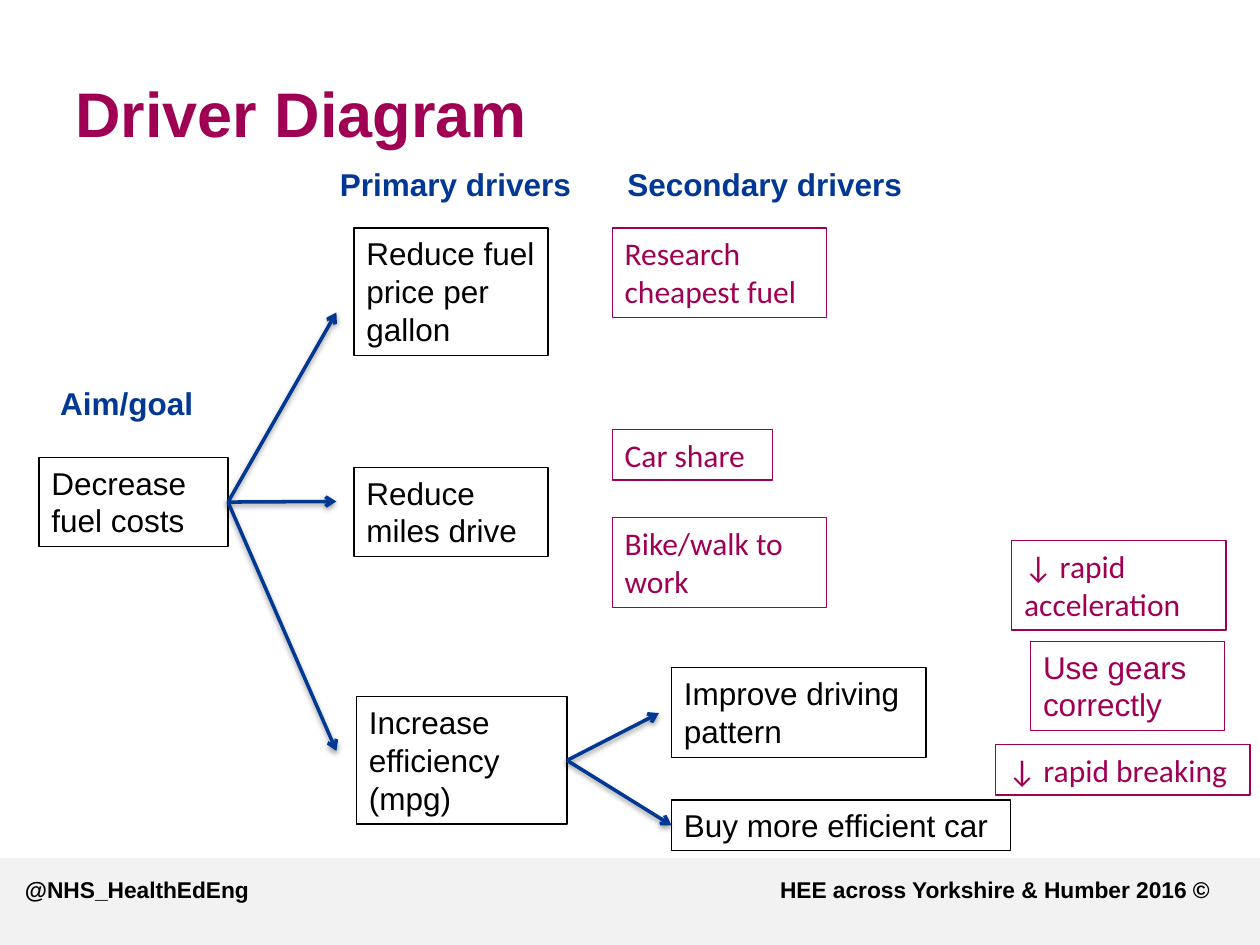
from dataclasses import dataclass
from typing import Optional

from lxml import etree
from pptx import Presentation
from pptx.dml.color import RGBColor
from pptx.enum import shapes, text
from pptx.oxml import parse_xml
from pptx.oxml.ns import nsdecls, qn
from pptx.util import Inches, Pt


@dataclass(frozen=True)
class Theme:
    black: RGBColor = RGBColor(0x00, 0x00, 0x00)
    plum: RGBColor = RGBColor(0xA0, 0x00, 0x54)
    blue: RGBColor = RGBColor(0x00, 0x38, 0x93)
    band: RGBColor = RGBColor(0xF2, 0xF2, 0xF2)
    heading_font: str = "Arial"
    idea_font: str = "Calibri"
    title_size: float = 36
    body_size: float = 18
    footer_size: float = 13


THEME = Theme()
LEFT, RIGHT = 1, 3  # connection sites of a rectangle
ONE_LINE, TWO_LINES, THREE_LINES = 0.4, 0.71, 1.01  # box heights


@dataclass(frozen=True)
class Label:
    words: str
    left: float
    top: float
    width: float
    height: float = ONE_LINE
    size: float = THEME.body_size
    color: RGBColor = THEME.blue


@dataclass(frozen=True)
class Box:
    lines: tuple[str, ...]
    left: float
    top: float
    width: float
    height: float
    color: RGBColor = THEME.black
    font: str = THEME.heading_font


@dataclass(frozen=True)
class Arrow:
    source: str
    end: tuple[float, float]
    target: Optional[str] = None


def idea(*lines: str, left: float, top: float, width: float,
         height: float = TWO_LINES, font: str = THEME.idea_font) -> Box:
    """A plum box for a concrete change."""
    return Box(lines, left, top, width, height, THEME.plum, font)


def add_run(paragraph, words: str, size: float, color: RGBColor,
            font: str = THEME.heading_font, bold: bool = False) -> None:
    run = paragraph.add_run()
    run.text = words
    run.font.name = font
    run.font.size = Pt(size)
    run.font.bold = bold
    run.font.color.rgb = color


def draw_label(slide, label: Label):
    holder = slide.shapes.add_textbox(Inches(label.left), Inches(label.top),
                                      Inches(label.width), Inches(label.height))
    frame = holder.text_frame
    frame.word_wrap = True
    frame.vertical_anchor = text.MSO_ANCHOR.MIDDLE
    add_run(frame.paragraphs[0], label.words, label.size, label.color, bold=True)
    return holder


def draw_box(slide, box: Box):
    shape = slide.shapes.add_shape(shapes.MSO_SHAPE.RECTANGLE, Inches(box.left), Inches(box.top),
                                   Inches(box.width), Inches(box.height))
    shape.shadow.inherit = False
    shape.fill.background()
    shape.line.color.rgb = box.color
    shape.line.width = Pt(0.75)
    frame = shape.text_frame
    frame.word_wrap = True
    frame.auto_size = text.MSO_AUTO_SIZE.SHAPE_TO_FIT_TEXT
    frame.vertical_anchor = text.MSO_ANCHOR.TOP
    for index, line in enumerate(box.lines):
        paragraph = frame.add_paragraph() if index else frame.paragraphs[0]
        paragraph.alignment = text.PP_ALIGN.LEFT
        add_run(paragraph, line, THEME.body_size, box.color, box.font)
    return shape


def draw_arrow(slide, arrow: Arrow, drawn: dict) -> None:
    end_x, end_y = map(Inches, arrow.end)
    source = drawn[arrow.source]
    connector = slide.shapes.add_connector(
        shapes.MSO_CONNECTOR.STRAIGHT, source.left + source.width,
        source.top + source.height // 2, end_x, end_y)
    connector.begin_connect(source, RIGHT)
    if arrow.target:
        connector.end_connect(drawn[arrow.target], LEFT)
    connector.line.color.rgb = THEME.blue
    connector.line.width = Pt(2)
    etree.SubElement(connector.line._get_or_add_ln(), qn("a:tailEnd"), type="arrow")
    connector._element.spPr.append(parse_xml(
        f'<a:effectLst {nsdecls("a")}>'
        f'<a:outerShdw blurRad="{Pt(3.1)}" dist="{Pt(1.6)}" dir="5400000" rotWithShape="0">'
        '<a:srgbClr val="000000"><a:alpha val="38000"/></a:srgbClr>'
        '</a:outerShdw></a:effectLst>'))


def draw_footer(slide) -> None:
    band = slide.shapes.add_shape(shapes.MSO_SHAPE.RECTANGLE, 0, Inches(6.81),
                                  Inches(10), Inches(0.69))
    band.shadow.inherit = False
    band.fill.solid()
    band.fill.fore_color.rgb = THEME.band
    band.line.fill.background()

    credit = slide.shapes.add_textbox(Inches(0.1), Inches(6.9), Inches(9.63), Inches(0.4))
    credit.text_frame.word_wrap = True
    paragraph = credit.text_frame.paragraphs[0]
    stops = etree.SubElement(paragraph._p.get_or_add_pPr(), qn("a:tabLst"))
    etree.SubElement(stops, qn("a:tab"), pos=str(Inches(9.4)), algn="r")
    add_run(paragraph, "@NHS_HealthEdEng\tHEE across Yorkshire & Humber 2016 ©",
            THEME.footer_size, THEME.black)
    paragraph.runs[0].font.bold = True


PRIMARY_X, IDEA_X, PATTERN_X = 2.81, 4.86, 5.33
PRIMARY_W, IDEA_W = 1.54, 1.7
ARROW_X = 2.67

LABELS = (
    Label("Driver Diagram", 0.5, 0.52, 8.5, 0.74, THEME.title_size, THEME.plum),
    Label("Aim/goal", 0.38, 3, 1.5),
    Label("Primary drivers", 2.6, 1.26, 2.23),
    Label("Secondary drivers", 4.88, 1.26, 2.68),
)
DRIVERS = {
    "aim": Box(("Decrease fuel costs",), 0.31, 3.63, 1.5, TWO_LINES),
    "price": Box(("Reduce fuel price per gallon",), PRIMARY_X, 1.81, PRIMARY_W, THREE_LINES),
    "miles": Box(("Reduce miles drive",), PRIMARY_X, 3.71, PRIMARY_W, TWO_LINES),
    "efficiency": Box(("Increase efficiency (mpg)",), 2.83, 5.53, 1.67, THREE_LINES),
    "pattern": Box(("Improve driving", "pattern"), PATTERN_X, 5.3, 2.02, TWO_LINES),
    "car": Box(("Buy more efficient car",), PATTERN_X, 6.35, 2.69, ONE_LINE),
}
IDEAS = (
    idea("Research cheapest fuel", left=IDEA_X, top=1.81, width=IDEA_W),
    idea("Car share", left=IDEA_X, top=3.41, width=1.27, height=ONE_LINE),
    idea("Bike/walk to work", left=IDEA_X, top=4.11, width=IDEA_W),
    idea("↓ rapid", "acceleration", left=8.03, top=4.29, width=IDEA_W),
    idea("Use gears correctly", left=8.18, top=5.09, width=1.54, font=THEME.heading_font),
    idea("↓ rapid breaking", left=7.9, top=5.91, width=2.02, height=ONE_LINE),
)
ARROWS = (
    Arrow("aim", (ARROW_X, 2.48)),
    Arrow("aim", (ARROW_X, 3.98)),
    Arrow("aim", (ARROW_X, 5.96)),
    Arrow("efficiency", (5.23, 5.66)),
    Arrow("efficiency", (PATTERN_X, 6.55), target="car"),
)


def main() -> None:
    deck = Presentation()
    deck.slide_width, deck.slide_height = Inches(10), Inches(7.5)
    slide = deck.slides.add_slide(deck.slide_layouts[6])
    draw_footer(slide)
    for label in LABELS:
        draw_label(slide, label)
    drawn = {key: draw_box(slide, box) for key, box in DRIVERS.items()}
    for box in IDEAS:
        draw_box(slide, box)
    for arrow in ARROWS:
        draw_arrow(slide, arrow, drawn)
    deck.save("out.pptx")


if __name__ == "__main__":
    main()
